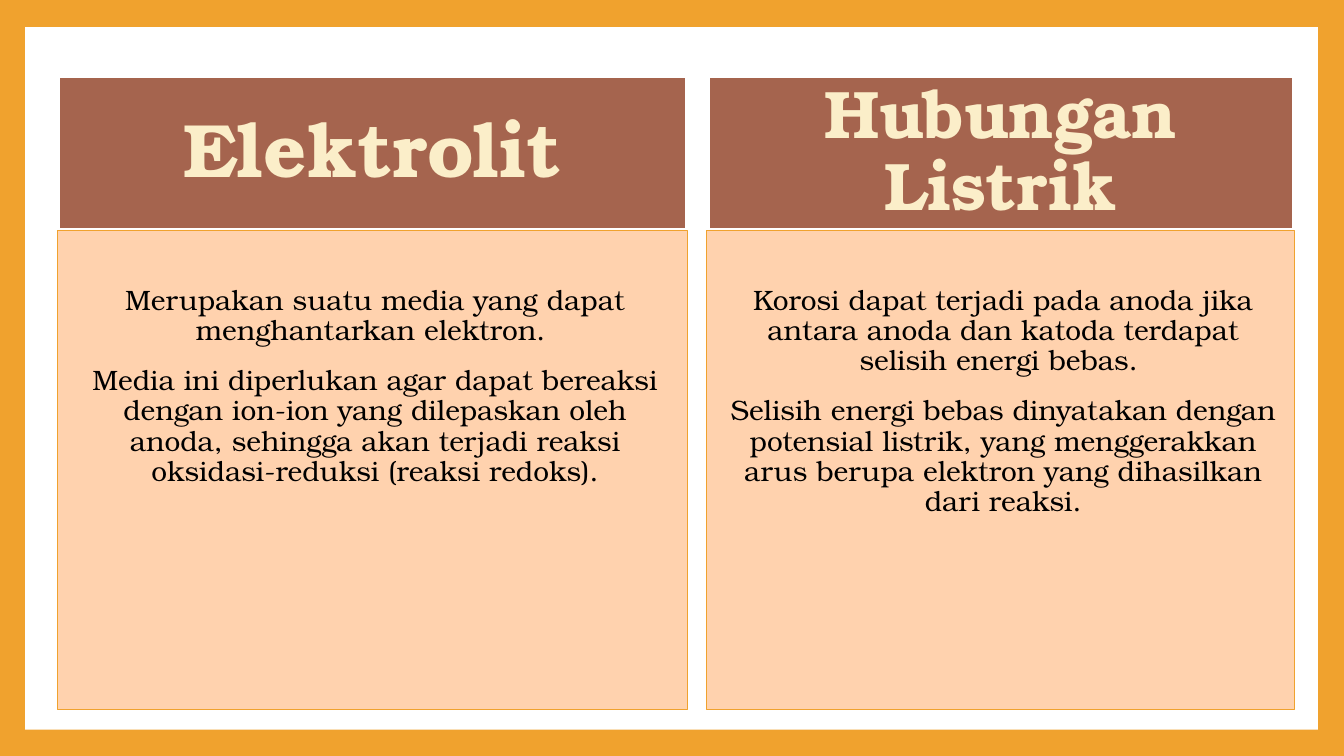
from dataclasses import dataclass

from pptx import Presentation
from pptx.dml.color import RGBColor as Rgb
from pptx.enum.shapes import MSO_SHAPE as Preset
from pptx.enum.text import MSO_ANCHOR as Anchor, PP_ALIGN as Align
from pptx.shapes.autoshape import Shape
from pptx.slide import Slide
from pptx.util import Inches, Pt


@dataclass(frozen=True)
class Theme:
    font: str = "TeX Gyre Bonum"
    orange: Rgb = Rgb(0xF0, 0xA2, 0x2E)
    white: Rgb = Rgb(0xFF, 0xFF, 0xFF)
    brown: Rgb = Rgb(0xA5, 0x64, 0x4E)
    peach: Rgb = Rgb(0xFF, 0xD2, 0xAE)
    cream: Rgb = Rgb(0xFB, 0xEE, 0xC9)
    black: Rgb = Rgb(0, 0, 0)
    body_size: float = 20
    heading_line: float = 4.25
    body_line: float = 0.79


@dataclass(frozen=True)
class Box:
    left: float
    top: float
    width: float
    height: float


@dataclass(frozen=True)
class Topic:
    left: float
    width: float
    heading: str
    heading_size: float
    statements: tuple[str, ...]


THEME = Theme()
HEADING_TOP, HEADING_HEIGHT, BODY_HEIGHT = 0.74, 1.55, 4.75
TOPICS = (
    Topic(0.57, 6.25, "Elektrolit", 54, (
        "Merupakan suatu media yang dapat menghantarkan elektron. ",
        "Media ini diperlukan agar dapat bereaksi dengan ion-ion yang "
        "dilepaskan oleh anoda, sehingga akan terjadi reaksi "
        "oksidasi-reduksi (reaksi redoks).",
    )),
    Topic(7.01, 5.83, "Hubungan Listrik", 48, (
        "Korosi dapat terjadi pada anoda jika antara anoda dan katoda "
        "terdapat selisih energi bebas. ",
        "Selisih energi bebas dinyatakan dengan potensial listrik, yang "
        "menggerakkan arus berupa elektron yang dihasilkan dari reaksi.",
    )),
)


def add_panel(slide: Slide, box: Box, fill: Rgb,
              line: Rgb | None = None, line_width: float = 0) -> Shape:
    panel = slide.shapes.add_shape(
        Preset.RECTANGLE, Inches(box.left), Inches(box.top),
        Inches(box.width), Inches(box.height))
    panel.shadow.inherit = False
    panel.fill.solid()
    panel.fill.fore_color.rgb = fill
    if line is None:
        panel.line.fill.background()
    else:
        panel.line.color.rgb = line
        panel.line.width = Pt(line_width)
    return panel


def write_text(panel: Shape, paragraphs: tuple[str, ...], *, size: float,
               color: Rgb, bold: bool = False, anchor: Anchor = Anchor.TOP,
               space_before: float = 0, left_inset: float = 0.1,
               top_inset: float = 0.05) -> None:
    frame = panel.text_frame
    frame.word_wrap = True
    frame.vertical_anchor = anchor
    frame.margin_left = Inches(left_inset)
    frame.margin_top = Inches(top_inset)
    for index, wording in enumerate(paragraphs):
        paragraph = frame.add_paragraph() if index else frame.paragraphs[0]
        paragraph.alignment = Align.CENTER
        paragraph.line_spacing = 0.9
        paragraph.space_before = Pt(space_before if index else 0)
        run = paragraph.add_run()
        run.text = wording
        run.font.name = THEME.font
        run.font.size = Pt(size)
        run.font.bold = bold
        run.font.color.rgb = color


def add_topic(slide: Slide, topic: Topic) -> None:
    heading = add_panel(
        slide, Box(topic.left, HEADING_TOP, topic.width, HEADING_HEIGHT),
        THEME.brown, THEME.white, THEME.heading_line)
    write_text(heading, (topic.heading,), size=topic.heading_size,
               color=THEME.cream, bold=True, anchor=Anchor.MIDDLE)
    body = add_panel(
        slide, Box(topic.left, HEADING_TOP + HEADING_HEIGHT,
                   topic.width, BODY_HEIGHT),
        THEME.peach, THEME.orange, THEME.body_line)
    write_text(body, topic.statements, size=THEME.body_size,
               color=THEME.black, space_before=14,
               left_inset=0.15, top_inset=0.55)


def main() -> None:
    deck = Presentation()
    deck.slide_width, deck.slide_height = Inches(13.33), Inches(7.5)
    slide = deck.slides.add_slide(deck.slide_layouts[6])
    slide.background.fill.solid()
    slide.background.fill.fore_color.rgb = THEME.orange
    add_panel(slide, Box(0.25, 0.27, 12.82, 6.97), THEME.white)
    for topic in reversed(TOPICS):
        add_topic(slide, topic)
    deck.save("out.pptx")


if __name__ == "__main__":
    main()
